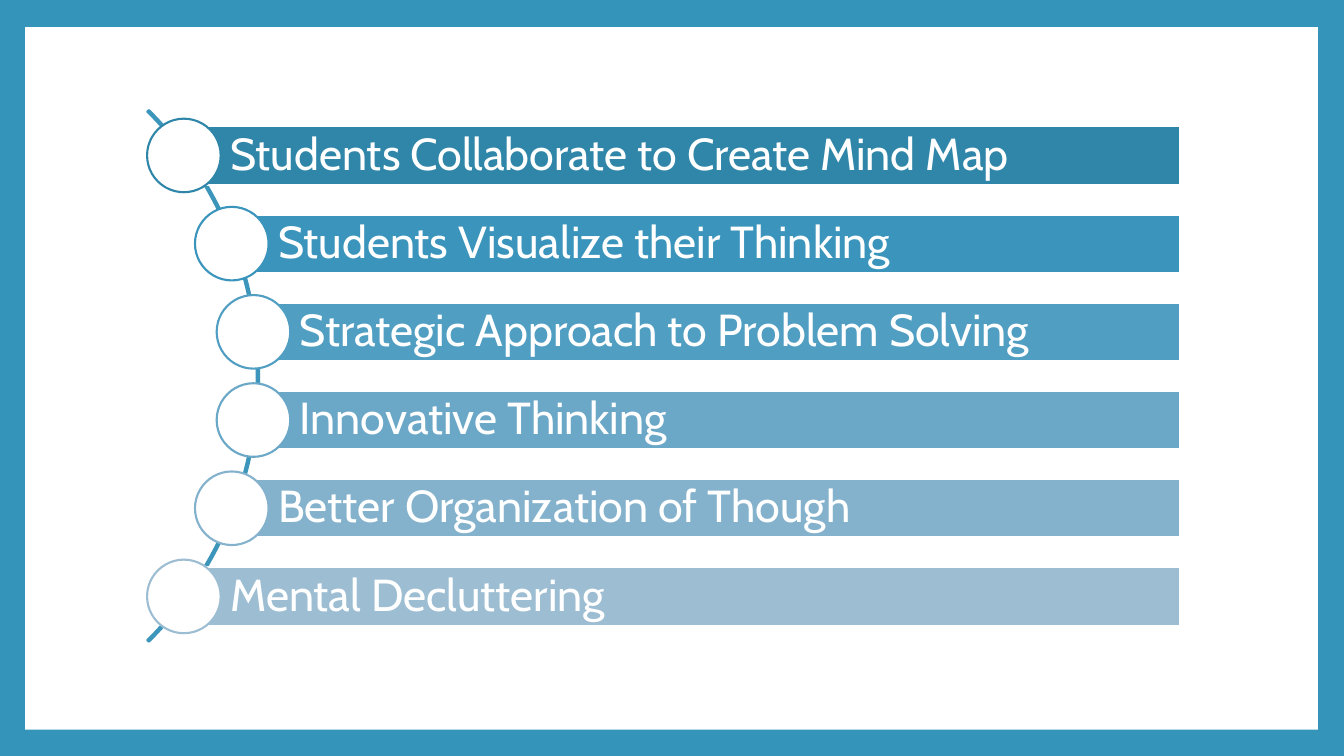
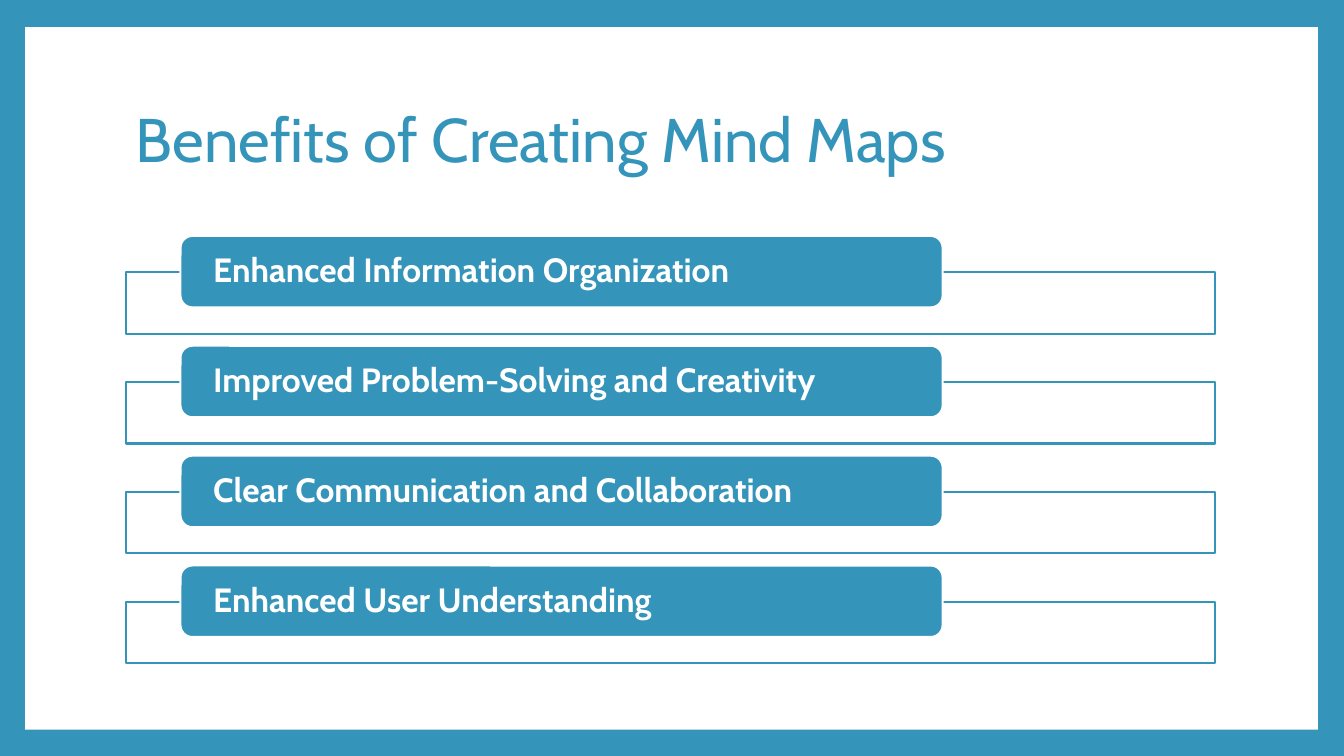
from dataclasses import dataclass
from math import sqrt

from lxml import etree
from pptx import Presentation
from pptx.dml.color import RGBColor
from pptx.enum.shapes import MSO_SHAPE
from pptx.enum.text import MSO_ANCHOR, PP_ALIGN
from pptx.oxml.ns import qn
from pptx.util import Inches, Pt

RECTANGLE = MSO_SHAPE.RECTANGLE
ROUNDED = MSO_SHAPE.ROUNDED_RECTANGLE
OVAL = MSO_SHAPE.OVAL
BLOCK_ARC = MSO_SHAPE.BLOCK_ARC
MIDDLE = MSO_ANCHOR.MIDDLE
LEFT = PP_ALIGN.LEFT


@dataclass(frozen=True)
class Theme:
    accent: str = "3494BA"
    arc: str = "3C96BB"
    white: str = "FFFFFF"
    font: str = "Cabin"
    title_size: int = 44
    bar_size: int = 32
    pill_size: int = 24
    line_width: float = 1.5
    line_spacing: float = 0.9


@dataclass(frozen=True)
class Box:
    left: float
    top: float
    width: float
    height: float

    def lengths(self):
        return [Inches(v) for v in (self.left, self.top, self.width, self.height)]


THEME = Theme()
SLIDE_SIZE = (13.33, 7.5)
PANEL = Box(0.25, 0.27, 12.82, 6.97)
TITLE = Box(1.25, 0.67, 10.8, 1.48)
CURVED_LIST = Box(1.46, 1.1, 10.24, 5.26)
PILL_LIST = Box(1.25, 2.34, 10.8, 4.24)

CURVED_ITEMS = [
    ("Students Collaborate to Create Mind Map", "2F86A9"),
    ("Students Visualize their Thinking", "3A94BC"),
    ("Strategic Approach to Problem Solving", "519EC3"),
    ("Innovative Thinking", "6BA7C7"),
    ("Better Organization of Though", "84B2CC"),
    ("Mental Decluttering", "9CBDD2"),
]
BENEFITS = [
    "Enhanced Information Organization",
    "Improved Problem-Solving and Creativity",
    "Clear Communication and Collaboration",
    "Enhanced User Understanding",
]


def set_attributes(target, values):
    for name, value in values.items():
        setattr(target, name, value)


def add_box(slide, kind, box, fill=None, line=None):
    """Add a flat preset shape; no colour means no fill or no line."""
    shape = slide.shapes.add_shape(kind, *box.lengths())
    shape.shadow.inherit = False
    if fill:
        shape.fill.solid()
        shape.fill.fore_color.rgb = RGBColor.from_string(fill)
    else:
        shape.fill.background()
    if line:
        shape.line.color.rgb = RGBColor.from_string(line)
        shape.line.width = Pt(THEME.line_width)
    else:
        shape.line.fill.background()
    return shape


def write_text(shape, text, size, color, insets, bold=False):
    """Write one line; insets are left, top, right, bottom in inches."""
    frame = shape.text_frame
    sides = ("margin_left", "margin_top", "margin_right", "margin_bottom")
    margins = {side: Inches(inset) for side, inset in zip(sides, insets)}
    set_attributes(frame, {"word_wrap": True, "vertical_anchor": MIDDLE, **margins})
    paragraph = frame.paragraphs[0]
    set_attributes(paragraph, {"alignment": LEFT, "line_spacing": THEME.line_spacing})
    run = paragraph.add_run()
    run.text = text
    set_attributes(run.font, {"name": THEME.font, "size": Pt(size), "bold": bold})
    run.font.color.rgb = RGBColor.from_string(color)


def set_opacity(shape, percent):
    color = shape.fill._xPr.find(qn("a:solidFill"))[0]
    etree.SubElement(color, qn("a:alpha")).set("val", str(percent * 1000))


def add_framed_slide(presentation):
    """Start a blank slide with the white panel inside the coloured frame."""
    slide = presentation.slides.add_slide(presentation.slide_layouts[6])
    add_box(slide, RECTANGLE, PANEL, fill=THEME.white)
    return slide


def add_title(slide, box, text):
    title = slide.shapes.add_textbox(*box.lengths())
    write_text(title, text, THEME.title_size, THEME.accent, (0.1, 0.05, 0.1, 0.05))


def add_curved_list(slide, box, items):
    """Bars whose left ends, marked by circles, follow an arc."""
    arc_radius, track_radius = 3.73, 3.7
    bar_height, circle_size, pitch = 0.58, 0.73, 0.875
    center_x = box.left - 2.62
    center_y = box.top + box.height / 2

    # Arc behind the bars, from 315 to 45 degrees
    arc_box = Box(center_x - arc_radius, center_y - arc_radius,
                  2 * arc_radius, 2 * arc_radius)
    arc = add_box(slide, BLOCK_ARC, arc_box, line=THEME.arc)
    for index, value in enumerate((189, 27, 0.003)):
        arc.adjustments[index] = value

    for index, (text, color) in enumerate(items):
        offset = (index - (len(items) - 1) / 2) * pitch
        middle = center_y + offset
        left = center_x + sqrt(track_radius ** 2 - offset ** 2)

        # Bar with its label
        bar_box = Box(left, middle - bar_height / 2,
                      box.left + box.width - left, bar_height)
        bar = add_box(slide, RECTANGLE, bar_box, color, THEME.white)
        write_text(bar, text, THEME.bar_size, THEME.white, (0.46, 0.09, 0.09, 0.09))

        # Circle on the arc
        circle_box = Box(left - circle_size / 2, middle - circle_size / 2,
                         circle_size, circle_size)
        add_box(slide, OVAL, circle_box, THEME.white, color)


def add_pill_list(slide, box, items):
    """Outlined boxes, each with a rounded label over its top edge."""
    outline_drop, outline_height = 0.36, 0.61
    pill_height, pill_share = 0.71, 0.7
    pitch = (box.height - outline_drop - outline_height) / (len(items) - 1)

    for index, text in enumerate(items):
        top = box.top + index * pitch

        # Outlined box
        outline_box = Box(box.left, top + outline_drop, box.width, outline_height)
        outline = add_box(slide, RECTANGLE, outline_box, THEME.white, THEME.accent)
        set_opacity(outline, 90)

        # Rounded label
        pill_box = Box(box.left + box.width * 0.05, top,
                       box.width * pill_share, pill_height)
        pill = add_box(slide, ROUNDED, pill_box, THEME.accent, THEME.white)
        write_text(pill, text, THEME.pill_size, THEME.white,
                   (0.29, 0, 0.29, 0), bold=True)


def main():
    presentation = Presentation()
    presentation.slide_width, presentation.slide_height = map(Inches, SLIDE_SIZE)

    # Shared frame colour
    background = presentation.slide_master.background.fill
    background.solid()
    background.fore_color.rgb = RGBColor.from_string(THEME.accent)

    add_curved_list(add_framed_slide(presentation), CURVED_LIST, CURVED_ITEMS)

    benefits_slide = add_framed_slide(presentation)
    add_title(benefits_slide, TITLE, "Benefits of Creating Mind Maps")
    add_pill_list(benefits_slide, PILL_LIST, BENEFITS)

    presentation.save("out.pptx")


if __name__ == "__main__":
    main()
